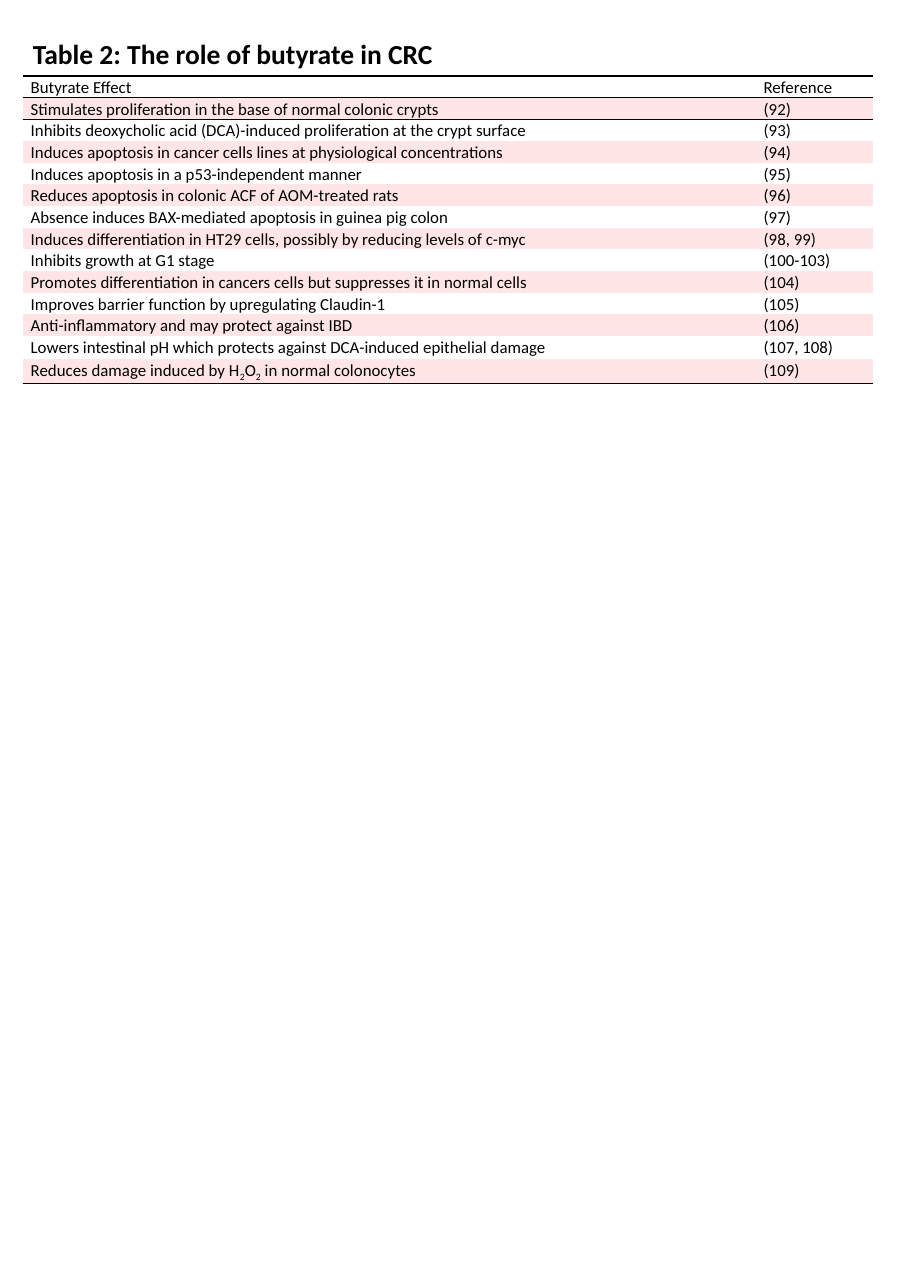
from lxml import etree
from pptx import Presentation
from pptx import util as u
from pptx.dml.color import RGBColor
from pptx.enum import text
from pptx.oxml import ns

PX = 914400 / 110.2
FONT = "Calibri"
BLACK = "000000"
BAND = "FFE5E5"
NO_STYLE_NO_GRID = "{2D5ABB26-0587-4C30-8999-92F81FD0307C}"

COLUMNS = [733, 117]
ROW, ROW_ABOVE_LAST, ROW_LAST = 21, 23, 24

# Underscores enclose subscripts.
ROWS = [
    ("Butyrate Effect", "Reference"),
    ("Stimulates proliferation in the base of normal colonic crypts", "(92)"),
    ("Inhibits deoxycholic acid (DCA)-induced proliferation at the crypt surface", "(93)"),
    ("Induces apoptosis in cancer cells lines at physiological concentrations", "(94)"),
    ("Induces apoptosis in a p53-independent manner", "(95)"),
    ("Reduces apoptosis in colonic ACF of AOM-treated rats", "(96)"),
    ("Absence induces BAX-mediated apoptosis in guinea pig colon", "(97)"),
    ("Induces differentiation in HT29 cells, possibly by reducing levels of c-myc", "(98, 99)"),
    ("Inhibits growth at G1 stage", "(100-103)"),
    ("Promotes differentiation in cancers cells but suppresses it in normal cells", "(104)"),
    ("Improves barrier function by upregulating Claudin-1", "(105)"),
    ("Anti-inflammatory and may protect against IBD", "(106)"),
    ("Lowers intestinal pH which protects against DCA-induced epithelial damage", "(107, 108)"),
    ("Reduces damage induced by H_2_O_2_ in normal colonocytes", "(109)"),
]


def px(n):
    return u.Emu(round(n * PX))


def rgb(value):
    return RGBColor.from_string(value)


def add_run(p, words, size, bold=False):
    r = p.add_run()
    r.text = words
    r.font.name = FONT
    r.font.size = u.Pt(size)
    r.font.bold = bold
    r.font.color.rgb = rgb(BLACK)
    return r


def add_title(s, words, x, y, w, h):
    tf = s.shapes.add_textbox(px(x), px(y), px(w), px(h)).text_frame
    tf.word_wrap = False
    tf.auto_size = text.MSO_AUTO_SIZE.SHAPE_TO_FIT_TEXT
    add_run(tf.paragraphs[0], words, 18, bold=True)


def add_border(cell, side):
    """Draw a 1 pt black rule on one side, "T" or "B"; call before filling."""
    ln = etree.SubElement(cell._tc.get_or_add_tcPr(), ns.qn(f"a:ln{side}"), w=str(u.Pt(1)))
    fill = etree.SubElement(ln, ns.qn("a:solidFill"))
    etree.SubElement(fill, ns.qn("a:srgbClr"), val=BLACK)


def write_cell(cell, words):
    cell.margin_left = cell.margin_right = u.Inches(0.07)
    cell.margin_top = cell.margin_bottom = 0
    p = cell.text_frame.paragraphs[0]
    p.line_spacing = 1.07
    for i, part in enumerate(words.split("_")):
        r = add_run(p, part, 11)
        if i % 2:
            r.font._element.set("baseline", "-25000")


def add_effects_table(s, x, y):
    last = len(ROWS) - 1
    heights = [ROW] * (last - 1) + [ROW_ABOVE_LAST, ROW_LAST]
    frame = s.shapes.add_table(len(ROWS), len(COLUMNS), px(x), px(y),
                               px(sum(COLUMNS)), px(sum(heights)))
    table = frame.table
    table.first_row = table.horz_banding = False
    table._tbl.tblPr.find(ns.qn("a:tableStyleId")).text = NO_STYLE_NO_GRID
    for column, width in zip(table.columns, COLUMNS):
        column.width = px(width)
    for i, (row, height) in enumerate(zip(table.rows, heights)):
        row.height = px(height)
        for cell, words in zip(row.cells, ROWS[i]):
            write_cell(cell, words)
            if i in (0, 1):
                add_border(cell, "T")
            if i in (0, last):
                add_border(cell, "B")
            if i % 2:
                cell.fill.solid()
                cell.fill.fore_color.rgb = rgb(BAND)
            else:
                cell.fill.background()


def main():
    prs = Presentation()
    prs.slide_width, prs.slide_height = px(911), px(1288)
    s = prs.slides.add_slide(prs.slide_layouts[6])
    add_title(s, "Table 2: The role of butyrate in CRC", 22, 32, 425, 44)
    add_effects_table(s, 23, 76)
    prs.save("out.pptx")


if __name__ == "__main__":
    main()
